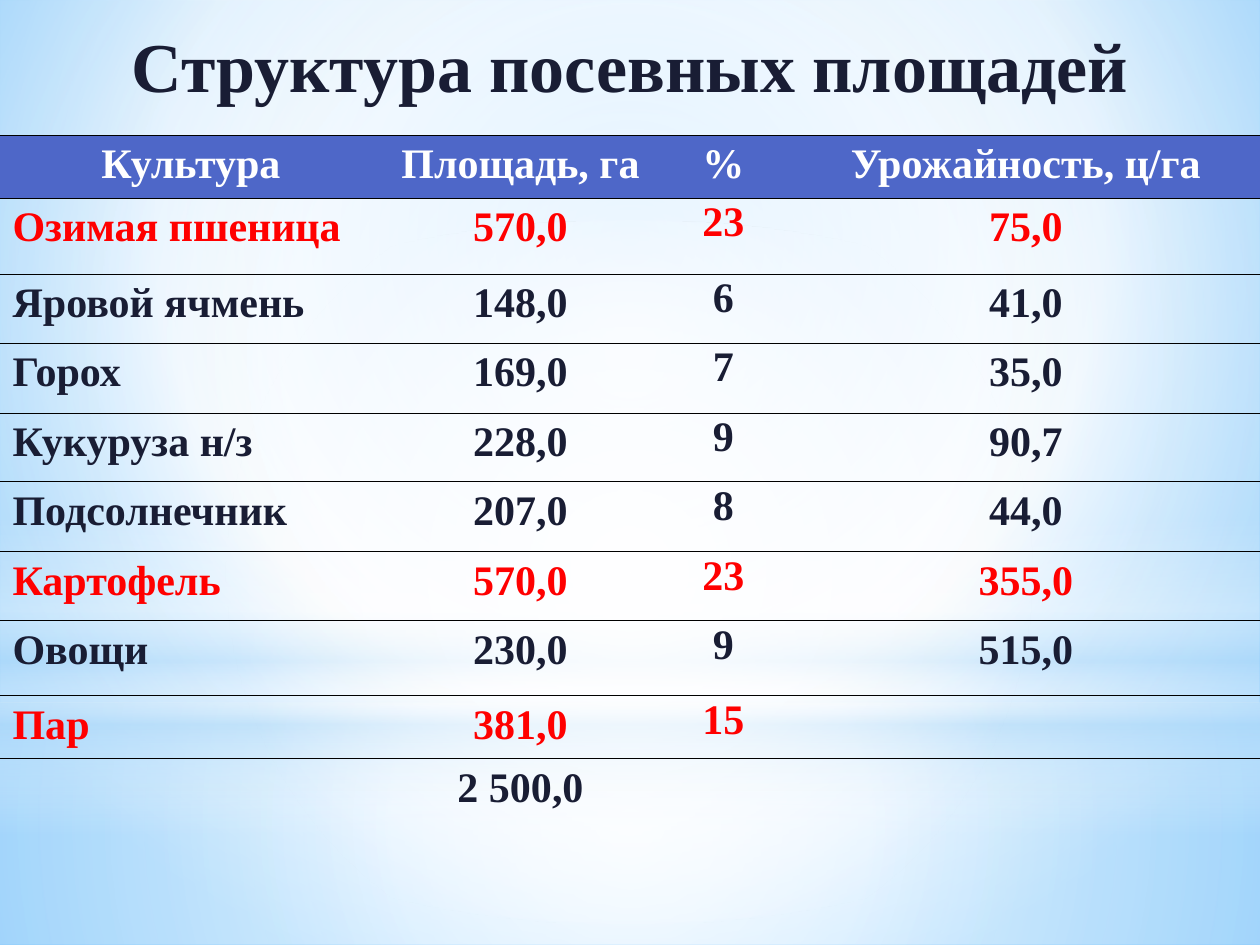
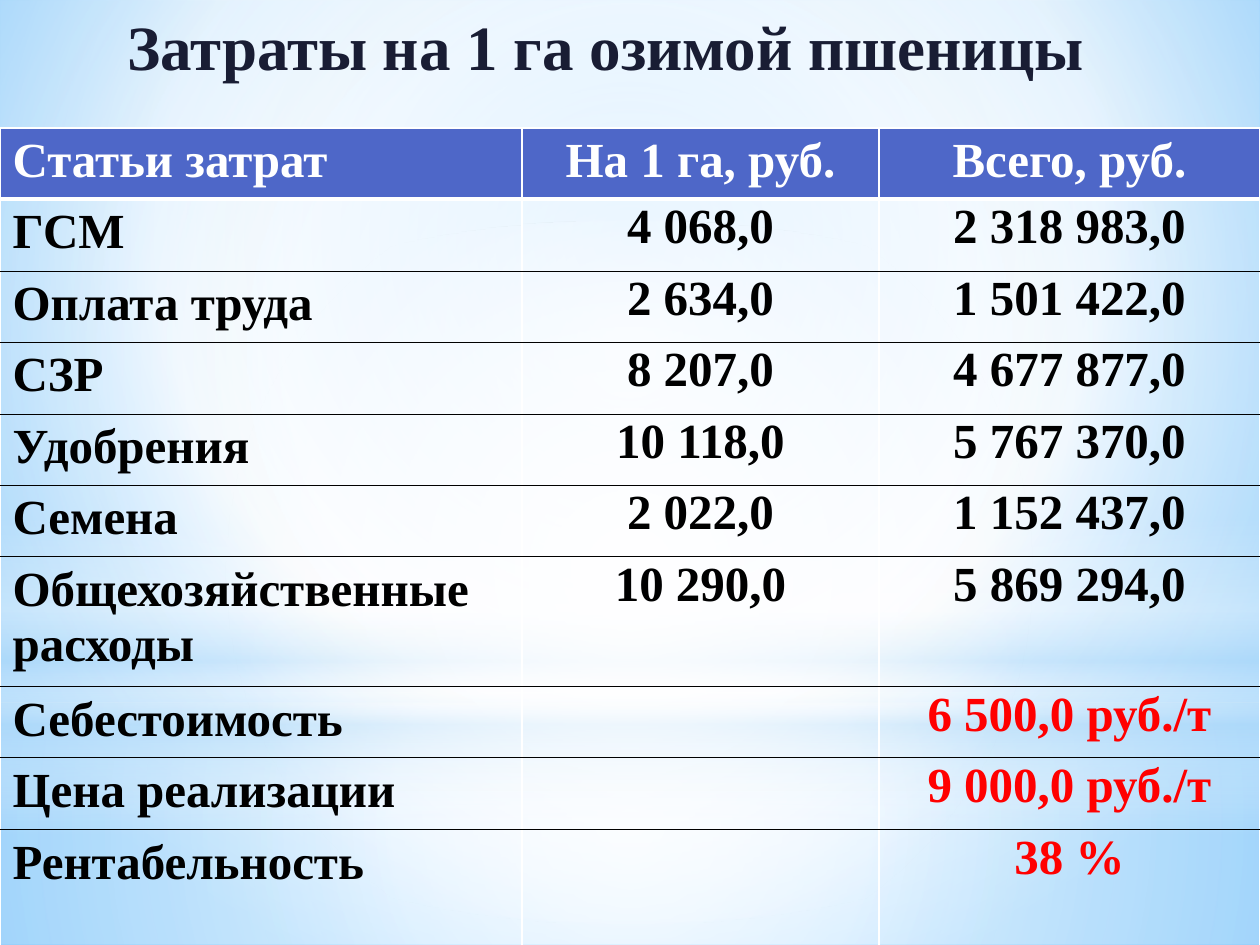
from itertools import product

from pptx import Presentation
from pptx.dml.color import RGBColor
from pptx.enum.shapes import MSO_SHAPE as Preset
from pptx.enum.text import MSO_ANCHOR as Anchor, MSO_AUTO_SIZE as AutoSize, PP_ALIGN as Align
from pptx.oxml import parse_xml
from pptx.oxml.ns import nsdecls, qn
from pptx.util import Pt

SCALE = 914400 / 126  # EMU per px
FONT = "Times New Roman"
COLORS = {
    "white": "FFFFFF",
    "black": "000000",
    "ink": "191D34",
    "red": "FF0000",
    "header": "4E67C8",
    "haze": "B4DCFA",
    "sky": "9ED5FF",
    "deep_sky": "5BB9FF",
}
CENTER = (50, 50, 50, 50)


def px(length):
    return round(length * SCALE)


def set_gradient(fill, props, stops, focus):
    """Fill with (position, color, opacity) stops, circular around focus or downwards if it is None."""
    fill.solid()
    stop_xml = "".join(
        f'<a:gs pos="{position * 1000}"><a:srgbClr val="{COLORS[color]}">'
        f'<a:alpha val="{opacity * 1000}"/></a:srgbClr></a:gs>'
        for position, color, opacity in stops
    )
    if focus:
        left, top, right, bottom = (side * 1000 for side in focus)
        shade = (f'<a:path path="circle"><a:fillToRect l="{left}" t="{top}" '
                 f'r="{right}" b="{bottom}"/></a:path>')
    else:
        shade = '<a:lin ang="5400000" scaled="0"/>'
    gradient = parse_xml(f'<a:gradFill {nsdecls("a")} rotWithShape="1">'
                         f"<a:gsLst>{stop_xml}</a:gsLst>{shade}</a:gradFill>")
    props.replace(props.find(qn("a:solidFill")), gradient)


deck = Presentation()
deck.slide_width, deck.slide_height = px(1260), px(945)
title_only = deck.slide_layouts[5]
pages = [deck.slides.add_slide(title_only) for _ in range(2)]

# Shared background: sky gradient and four translucent layers on the master
master = deck.slide_master
sky_fill = master.background.fill
sky_fill.solid()
set_gradient(sky_fill, master.element.find(".//" + qn("p:bgPr")),
             [(0, "sky", 100), (60, "white", 100), (100, "deep_sky", 100)], (20, 10, 20, 60))

layers = [
    (Preset.RECTANGLE, 703, 242,
     [(0, "white", 91), (37, "white", 76), (100, "haze", 79)], CENTER),
    (Preset.RECTANGLE, 0, 703,
     [(0, "white", 89), (48, "white", 62), (100, "haze", 79)], CENTER),
    (Preset.RECTANGLE, 519, 315,
     [(0, "white", 0), (29, "white", 30), (45, "haze", 40),
      (55, "white", 26), (65, "haze", 60), (100, "white", 0)], None),
    (Preset.OVAL, 221, 703, [(0, "white", 100), (56, "white", 0)], CENTER),
]
for index, (preset, top, height, stops, focus) in enumerate(layers):
    layer = pages[0].shapes.add_shape(preset, 0, px(top), px(1260), px(height))
    layer.shadow.inherit = False
    layer.line.fill.background()
    set_gradient(layer.fill, layer.element.spPr, stops, focus)
    layer.element.find(".//" + qn("p:cNvPr")).set("id", str(100 + index))
    master.shapes.element.insert(2 + index, layer.element)

# Table lines as (color, width in points)
thin = ("black", 0.5)
white_line = ("white", 1)

crops = {
    "title": "Структура посевных площадей",
    "title_box": (0, 16, 1260, 97),
    "title_size": 40,
    "title_align": Align.CENTER,
    "top": 135,
    "columns": [382, 277, 129, 476],
    "heights": [63, 76, 69, 70, 69, 70, 69, 75, 63, 63],
    "size": 24,
    "ink": "ink",
    "red_cells": set(product([1, 6, 8], range(4))),
    "tight_columns": [2],
    "centered_header": True,
    "side_line": None,
    "row_lines": [thin] * 10 + [None],
    "rows": [
        ["Культура", "Площадь, га", "%", "Урожайность, ц/га"],
        ["Озимая пшеница", "570,0", "23", "75,0"],
        ["Яровой ячмень", "148,0", "6", "41,0"],
        ["Горох", "169,0", "7", "35,0"],
        ["Кукуруза н/з", "228,0", "9", "90,7"],
        ["Подсолнечник", "207,0", "8", "44,0"],
        ["Картофель", "570,0", "23", "355,0"],
        ["Овощи", "230,0", "9", "515,0"],
        ["Пар", "381,0", "15", ""],
        ["", "2 500,0", "", ""],
    ],
}
costs = {
    "title": "Затраты на 1 га озимой пшеницы",
    "title_box": (115, 0, 999, 89),
    "title_size": 36,
    "title_align": Align.LEFT,
    "top": 128,
    "columns": [522, 357, 381],
    "heights": [71, 72, 71, 72, 71, 72, 130, 71, 72, 118],
    "size": 28,
    "ink": "black",
    "red_cells": set(product([7, 8, 9], [2])),
    "tight_columns": [1, 2],
    "centered_header": False,
    "side_line": white_line,
    "row_lines": [white_line, ("white", 3)] + [thin] * 8 + [white_line],
    "rows": [
        ["Статьи затрат", "На 1 га, руб.", "Всего, руб."],
        ["ГСМ", "4 068,0", "2 318 983,0"],
        ["Оплата труда", "2 634,0", "1 501 422,0"],
        ["СЗР", "8 207,0", "4 677 877,0"],
        ["Удобрения", "10 118,0", "5 767 370,0"],
        ["Семена", "2 022,0", "1 152 437,0"],
        ["Общехозяйственные расходы", "10 290,0", "5 869 294,0"],
        ["Себестоимость", "", "6 500,0 руб./т"],
        ["Цена реализации", "", "9 000,0 руб./т"],
        ["Рентабельность", "", "38 %"],
    ],
}

for page, content in zip(pages, [crops, costs]):
    title = page.shapes.title
    title.left, title.top, title.width, title.height = map(px, content["title_box"])
    frame = title.text_frame
    frame.text = content["title"]
    frame.word_wrap = True
    frame.auto_size = AutoSize.NONE
    frame.vertical_anchor = Anchor.BOTTOM
    para = frame.paragraphs[0]
    para.alignment = content["title_align"]
    para.font.name, para.font.size, para.font.bold = FONT, Pt(content["title_size"]), True
    para.font.color.rgb = RGBColor.from_string(COLORS["ink"])

    rows, columns, heights = content["rows"], content["columns"], content["heights"]
    table = page.shapes.add_table(len(rows), len(columns), 0, px(content["top"]),
                                  px(sum(columns)), px(sum(heights))).table
    table.horz_banding = False
    for column, width in zip(table.columns, columns):
        column.width = px(width)
    for row, height in zip(table.rows, heights):
        row.height = px(height)

    for r, c in product(range(len(rows)), range(len(columns))):
        cell = table.cell(r, c)
        cell.text = rows[r][c]
        if r == 0:
            color = "white"
            cell.fill.solid()
            cell.fill.fore_color.rgb = RGBColor.from_string(COLORS["header"])
        else:
            color = "red" if (r, c) in content["red_cells"] else content["ink"]
            cell.fill.background()
            if c in content["tight_columns"]:
                cell.margin_left = cell.margin_top = cell.margin_right = px(1)
                cell.margin_bottom = 0
        para = cell.text_frame.paragraphs[0]
        centered = c > 0 or (r == 0 and content["centered_header"])
        para.alignment = Align.CENTER if centered else Align.LEFT
        para.font.name, para.font.size, para.font.bold = FONT, Pt(content["size"]), True
        para.font.color.rgb = RGBColor.from_string(COLORS[color])

        side, row_lines = content["side_line"], content["row_lines"]
        borders = [("lnL", side), ("lnR", side), ("lnT", row_lines[r]), ("lnB", row_lines[r + 1])]
        cell_props = cell._tc.get_or_add_tcPr()
        for position, (tag, line) in enumerate(borders):
            if line:
                width = Pt(line[1])
                paint = f'<a:solidFill><a:srgbClr val="{COLORS[line[0]]}"/></a:solidFill>'
            else:
                width, paint = 0, "<a:noFill/>"
            cell_props.insert(position, parse_xml(
                f'<a:{tag} {nsdecls("a")} w="{width}">{paint}</a:{tag}>'))

deck.save("out.pptx")
